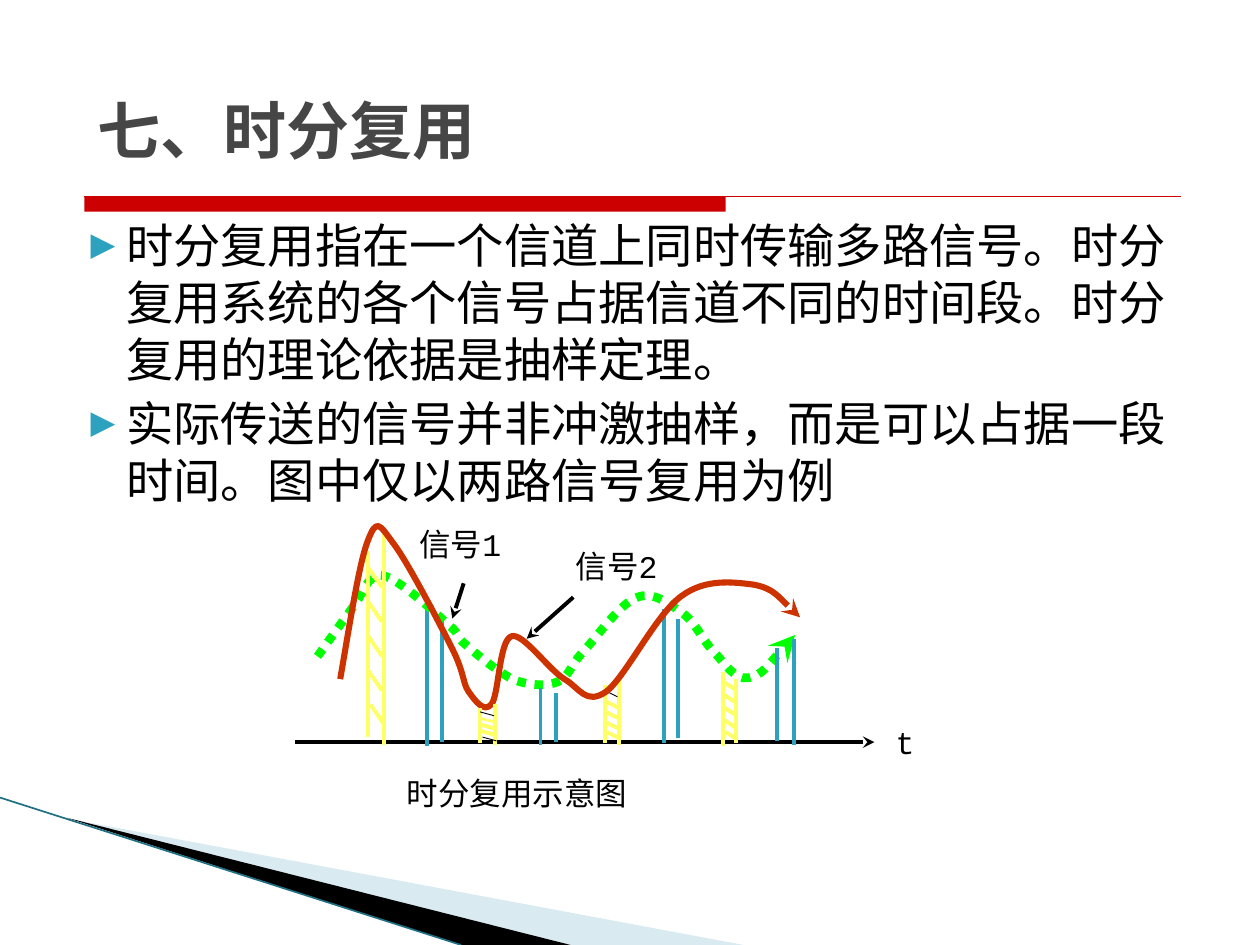
from lxml import etree
from pptx import Presentation
from pptx.dml.color import RGBColor
from pptx.enum.dml import MSO_LINE
from pptx.enum.shapes import MSO_CONNECTOR, MSO_SHAPE
from pptx.enum.text import MSO_ANCHOR, MSO_AUTO_SIZE, PP_ALIGN
from pptx.oxml.ns import qn
from pptx.util import Inches, Pt

STRAIGHT, RECT = MSO_CONNECTOR.STRAIGHT, MSO_SHAPE.RECTANGLE
DOTTED = MSO_LINE.ROUND_DOT
TOP, MIDDLE, BOTTOM = MSO_ANCHOR.TOP, MSO_ANCHOR.MIDDLE, MSO_ANCHOR.BOTTOM
BLACK = RGBColor(0x00, 0x00, 0x00)
GREY = RGBColor(0x46, 0x46, 0x46)
RED = RGBColor(0xCC, 0x00, 0x00)
ORANGE = RGBColor(0xCC, 0x33, 0x00)
GREEN = RGBColor(0x00, 0xFF, 0x00)
YELLOW = RGBColor(0xFF, 0xFF, 0x66)
TEAL = RGBColor(0x2D, 0xA2, 0xBF)
DARK_TEAL = RGBColor(0x1F, 0x70, 0x82)
PALE_BLUE = RGBColor(0xD9, 0xEA, 0xF1)
MONO, SANS, CJK = "Courier New", "DejaVu Sans", "Noto Sans CJK SC"

TITLE = "七、时分复用"
POINTS = [
    "时分复用指在一个信道上同时传输多路信号。时分复用系统的各个信号占据信道不同的时间段。时分复用的理论依据是抽样定理。",
    "实际传送的信号并非冲激抽样，而是可以占据一段时间。图中仅以两路信号复用为例",
]

# Diagram data, in inches from the diagram's corner.
AXIS_Y = 1.89
SIGNAL_1 = [
    (0.52, 1.21), (0.62, 1.07), (0.72, 0.93), (0.8, 0.82), (0.89, 0.71), (0.91, 0.55), (1.04, 0.57),
    (1.16, 0.59), (1.45, 0.86), (1.56, 0.96), (1.67, 1.05), (1.61, 1.05), (1.7, 1.12),
    (1.79, 1.2), (1.97, 1.35), (2.09, 1.4), (2.21, 1.44), (2.34, 1.45), (2.43, 1.41),
    (2.52, 1.37), (2.53, 1.27), (2.64, 1.16), (2.74, 1.05), (2.93, 0.78), (3.06, 0.74),
    (3.19, 0.69), (3.32, 0.8), (3.42, 0.87), (3.52, 0.94), (3.58, 1.09), (3.67, 1.18),
    (3.75, 1.26), (3.83, 1.4), (3.94, 1.38), (4.05, 1.36), (4.25, 1.1), (4.31, 1.04),
]
SIGNAL_2 = [
    (0.7, 1.39), (0.78, 0.93), (0.85, 0.47), (0.92, 0.29), (0.99, 0.11), (1.01, 0.16), (1.12, 0.31),
    (1.23, 0.45), (1.49, 0.95), (1.59, 1.15), (1.69, 1.35), (1.67, 1.42), (1.72, 1.49),
    (1.77, 1.56), (1.84, 1.66), (1.9, 1.59), (1.96, 1.52), (1.96, 1.08), (2.06, 1.05),
    (2.15, 1.02), (2.35, 1.31), (2.48, 1.39), (2.6, 1.46), (2.65, 1.6), (2.81, 1.49),
    (2.96, 1.38), (3.21, 0.87), (3.41, 0.73), (3.6, 0.59), (3.82, 0.62), (3.98, 0.64),
    (4.14, 0.67), (4.29, 0.85), (4.35, 0.9),
]
# Each pulse: (x, bottom, top) of its left and right edge.
FIRST_BLUE = ((1.39, 1.92, 0.82), (1.51, 1.89, 0.91))
BLUE_PULSES = [
    ((2.29, 1.91, 1.46), (2.41, 1.89, 1.5)),
    ((3.27, 1.9, 0.83), (3.38, 1.86, 0.91)),
    ((4.17, 1.88, 1.14), (4.3, 1.91, 1.07)),
]
# Edges, then hatching: first y, pitch, run, drop, and line widths other than 2.25.
YELLOW_PULSES = [
    (((2.8, 1.9, 1.44), (2.91, 1.91, 1.39)), (1.48, 0.083, 0.1, 0.05, {0: 0.5})),
    (((3.74, 1.92, 1.33), (3.84, 1.9, 1.39)), (1.41, 0.1, 0.09, 0.06, {})),
    (((0.92, 1.85, 0.37), (1.05, 1.91, 0.2)), (0.5, 0.273, 0.11, 0.16, {})),
]
LAST_YELLOW = (((1.81, 1.9, 1.62), (1.93, 1.91, 1.59)),
               (1.65, 0.05, 0.11, 0.03, {0: 0.5, 1: 1.5, 4: 0.5}))
LABELS = [("t", 5.01, 1.64, 0.29, 0.5), ("信号2", 2.47, 0.24, 1.03, 0.5),
          ("信号1", 1.23, 0.07, 1.03, 0.5), ("时分复用示意图", 1.13, 2.09, 3.69, 0.4)]
POINTERS = [((2.55, 0.74), (2.18, 1.07)), ((1.68, 0.63), (1.59, 0.91))]


def add_arrowhead(line):
    etree.SubElement(line._get_or_add_ln(), qn("a:tailEnd"), type="stealth")


def add_line(shapes, origin, start, end, color, width, arrow=False):
    ends = [Inches(o + v) for pt in (start, end) for o, v in zip(origin, pt)]
    c = shapes.add_connector(STRAIGHT, *ends)
    c.line.color.rgb = color
    c.line.width = Pt(width)
    if arrow:
        add_arrowhead(c.line)
    etree.SubElement(c._element.spPr, qn("a:effectLst"))


def add_outline(shapes, origin, points, close):
    pts = [(Inches(origin[0] + x), Inches(origin[1] + y)) for x, y in points]
    builder = shapes.build_freeform(*pts[0])
    builder.add_line_segments(pts[1:], close=close)
    s = builder.convert_to_shape()
    s.shadow.inherit = False
    return s


def add_curve(shapes, origin, points, color, width, dash=None):
    """Draw a chain of cubic curves: a start, then three points for each."""
    s = add_outline(shapes, origin, points, False)
    segments = list(s._element.iter(qn("a:lnTo")))
    for first, second, third in zip(*[iter(segments)] * 3):
        first.tag = qn("a:cubicBezTo")
        for seg in (second, third):
            first.append(seg[0])
            seg.getparent().remove(seg)
    s.fill.background()
    s.line.color.rgb = color
    s.line.width = Pt(width)
    if dash:
        s.line.dash_style = dash
    add_arrowhead(s.line)


def add_run(p, text, size, font, color, bold=False):
    r = p.add_run()
    r.text = text
    for name, value in dict(size=Pt(size), name=font, bold=bold).items():
        setattr(r.font, name, value)
    r.font.color.rgb = color
    etree.SubElement(r._r.get_or_add_rPr(), qn("a:ea"), typeface=CJK)


def place(s, left, top, width, height, **frame):
    """Set a shape's box and text frame; return the frame."""
    for name, value in zip(("left", "top", "width", "height"), (left, top, width, height)):
        setattr(s, name, Inches(value))
    tf = s.text_frame
    for name, value in dict(word_wrap=True, auto_size=MSO_AUTO_SIZE.NONE, **frame).items():
        setattr(tf, name, value)
    return tf


def title(s, *box):
    tf = place(s, *box, vertical_anchor=BOTTOM, margin_bottom=0)
    p = tf.paragraphs[0]
    p.alignment = PP_ALIGN.LEFT
    add_run(p, TITLE, 36, SANS, GREY, True)


def bullets(s, *box):
    tf = place(s, *box, vertical_anchor=TOP, margin_top=Inches(0.09))
    for i, text in enumerate(POINTS):
        p = tf.add_paragraph() if i else tf.paragraphs[0]
        p.space_before = Pt(4 if i else 0)
        p.line_spacing = Pt(32.6)
        pPr = p._p.get_or_add_pPr()
        pPr.set("marL", str(Inches(0.4)))
        pPr.set("indent", str(Inches(-0.28)))
        color = etree.SubElement(pPr, qn("a:buClr"))
        etree.SubElement(color, qn("a:srgbClr"), val=str(TEAL))
        etree.SubElement(pPr, qn("a:buSzPct"), val="68000")
        etree.SubElement(pPr, qn("a:buFont"), typeface=SANS)
        etree.SubElement(pPr, qn("a:buChar"), char="▶")
        add_run(p, text, 27, MONO, BLACK)


def title_rule(shapes, left, top, width, height):
    bar = shapes.add_shape(RECT, Inches(left), Inches(top), Inches(5.09), Inches(height))
    bar.shadow.inherit = False
    bar.fill.solid()
    bar.fill.fore_color.rgb = RED
    bar.line.fill.background()
    add_line(shapes, (left, top), (0, 0), (width, 0), RED, 0.75)


def corner_wedges(shapes, *origin):
    for points, color in [([(0.55, 0.5), (5.9, 1.5), (4.52, 1.5)], PALE_BLUE),
                          ([(0.53, 0.49), (4.53, 1.5), (3.66, 1.5)], BLACK)]:
        s = add_outline(shapes, origin, points, True)
        s.fill.solid()
        s.fill.fore_color.rgb = color
        s.line.fill.background()
    add_line(shapes, origin, (0, 0.33), (3.66, 1.5), DARK_TEAL, 0.95)


def pulse(shapes, origin, edges, color):
    for x, bottom, top in edges:
        add_line(shapes, origin, (x, bottom), (x, top), color, 2.25)


def hatched_pulse(shapes, origin, edges, hatch):
    pulse(shapes, origin, edges, YELLOW)
    first, pitch, run, drop, widths = hatch
    for i in range(5):
        x = edges[0][0] + (0.02 if i == 4 else 0)
        y = first + i * pitch
        width = widths.get(i, 2.25)
        color = BLACK if width == 0.5 else YELLOW
        add_line(shapes, origin, (x, y), (x + run, y + drop), color, width)


def multiplex_diagram(shapes, *origin):
    add_line(shapes, origin, (0.34, AXIS_Y), (4.94, AXIS_Y), BLACK, 2.25, True)
    pulse(shapes, origin, FIRST_BLUE, TEAL)
    add_curve(shapes, origin, SIGNAL_1, GREEN, 5, DOTTED)
    for edges in BLUE_PULSES:
        pulse(shapes, origin, edges, TEAL)
    for edges, hatch in YELLOW_PULSES:
        hatched_pulse(shapes, origin, edges, hatch)
    add_curve(shapes, origin, SIGNAL_2, ORANGE, 3.5)
    hatched_pulse(shapes, origin, *LAST_YELLOW)
    for start, end in POINTERS:
        add_line(shapes, origin, start, end, BLACK, 2.25, True)
    for text, x, y, width, height in LABELS:
        s = shapes.add_textbox(0, 0, 0, 0)
        tf = place(s, origin[0] + x, origin[1] + y, width, height, vertical_anchor=MIDDLE)
        add_run(tf.paragraphs[0], text, 18, MONO, BLACK)


def main():
    prs = Presentation()
    prs.slide_width, prs.slide_height = Inches(10), Inches(7.5)
    slide = prs.slides.add_slide(prs.slide_layouts[1])
    corner_wedges(slide.shapes, 0, 6)
    bullets(slide.placeholders[1], 0.5, 1.62, 9, 4.95)
    multiplex_diagram(slide.shapes.add_group_shape().shapes, 2, 4)
    title_rule(slide.shapes, 0.67, 1.56, 8.7, 0.12)
    title(slide.shapes.title, 0.67, 0, 8.75, 1.33)
    prs.save("out.pptx")


if __name__ == "__main__":
    main()
